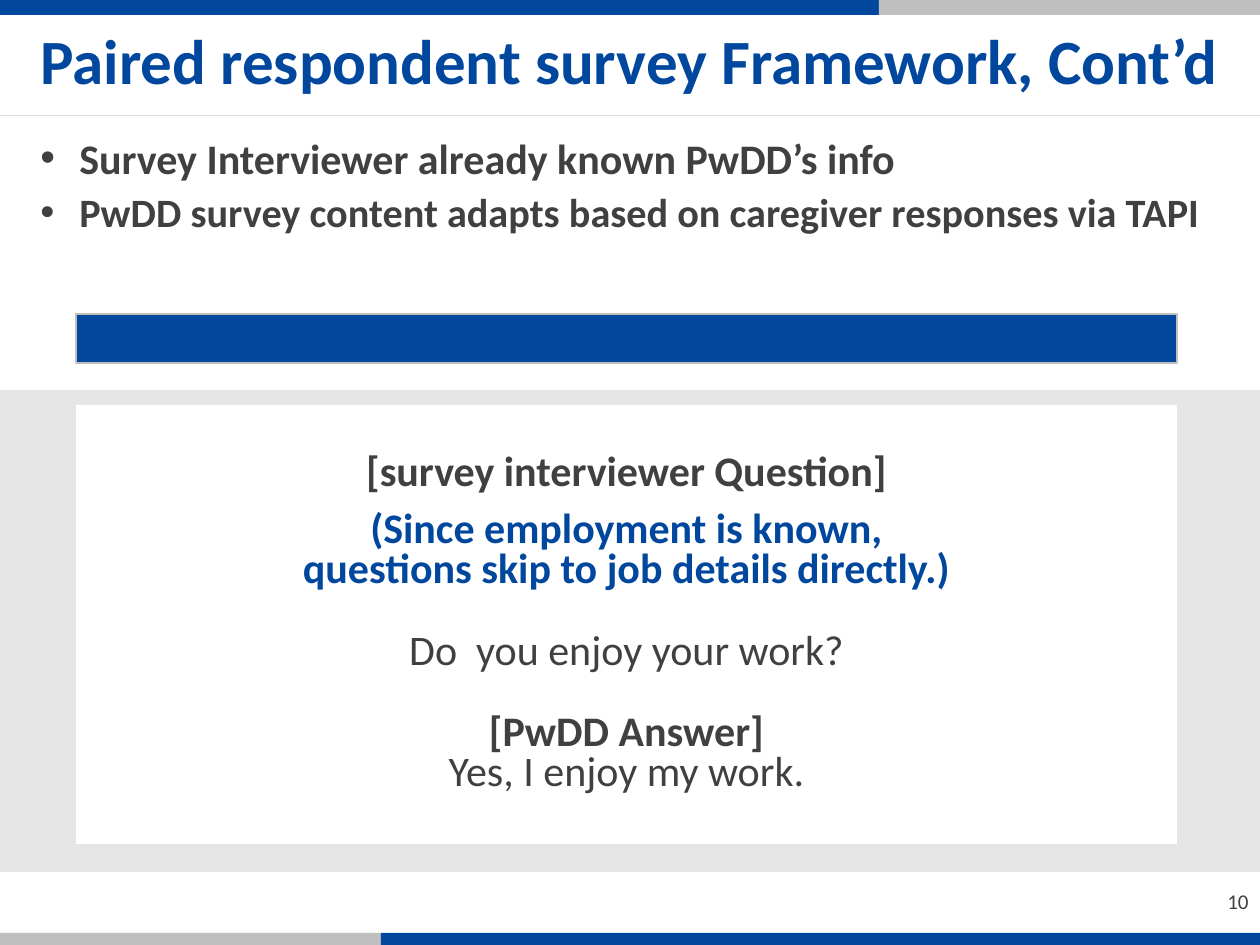
from lxml.etree import SubElement
from pptx import Presentation
from pptx.dml.color import RGBColor
from pptx.enum.shapes import MSO_CONNECTOR, MSO_SHAPE
from pptx.enum.text import MSO_ANCHOR as Anchor, PP_ALIGN as Align
from pptx.oxml.ns import qn
from pptx.util import Pt

PX = 914400 // 126
WIDTH, HEIGHT = 1260, 945
FONT = "Calibri"
BLUE, DARK, GRAY = "00479D", "404040", "BFBFBF"
BULLET_INDENT = 39

TITLE = "Paired respondent survey Framework, Cont’d"
BULLETS = [
    ("Survey Interviewer already known PwDD’s info", 24),
    ("PwDD survey content adapts based on caregiver responses via TAPI", 23),
]
# text, colour, bold, points of space before
DIALOGUE = [
    ("[survey interviewer Question]", DARK, True, 0),
    ("(Since employment is known,", BLUE, True, 9.8),
    ("questions skip to job details directly.)", BLUE, True, 0),
    ("Do  you enjoy your work?", DARK, False, 23.4),
    ("[PwDD Answer]", DARK, True, 23.4),
    ("Yes, I enjoy my work.", DARK, False, 0),
]
# left, top, width, height, colour
EDGE_BARS = [
    (0, 0, 879, 15, BLUE),
    (879, 0, 381, 15, GRAY),
    (0, 933, 381, 12, GRAY),
    (381, 933, 879, 12, BLUE),
]


def rgb(color):
    return RGBColor.from_string(color)


def scaled(*lengths):
    return [length * PX for length in lengths]


def add_box(slide, box, fill, kind=MSO_SHAPE.RECTANGLE):
    shape = slide.shapes.add_shape(kind, *scaled(*box))
    shape.shadow.inherit = False
    shape.fill.solid()
    shape.fill.fore_color.rgb = rgb(fill)
    shape.line.fill.background()
    return shape


def add_text_frame(slide, box, anchor=Anchor.TOP):
    frame = slide.shapes.add_textbox(*scaled(*box)).text_frame
    frame.word_wrap = True
    frame.vertical_anchor = anchor
    return frame


def write(frame, index, text, size, color=DARK, bold=False, align=Align.LEFT, spacing=1.0):
    """Fill the first paragraph at index 0, append one otherwise."""
    paragraph = frame.add_paragraph() if index else frame.paragraphs[0]
    paragraph.text = text
    paragraph.alignment = align
    paragraph.line_spacing = spacing
    font = paragraph.font
    font.name, font.size, font.bold = FONT, Pt(size), bold
    font.color.rgb = rgb(color)
    return paragraph


def add_bullet(paragraph):
    properties = paragraph._p.get_or_add_pPr()
    properties.set("marL", str(BULLET_INDENT * PX))
    properties.set("indent", str(-BULLET_INDENT * PX))
    bullet_font = properties.makeelement(qn("a:buFont"), {"typeface": "Arial"})
    bullet = properties.makeelement(qn("a:buChar"), {"char": "•"})
    defaults = properties.find(qn("a:defRPr"))
    defaults.addprevious(bullet_font)
    defaults.addprevious(bullet)


def add_rule(slide, top):
    rule = slide.shapes.add_connector(MSO_CONNECTOR.STRAIGHT, *scaled(0, top, WIDTH, top))
    rule.line.color.rgb = rgb("D9D9D9")
    rule.line.width = Pt(0.5)
    SubElement(rule._element.spPr, qn("a:effectLst"))


def add_band(slide, box, opacity):
    band = add_box(slide, box, "000000")
    color = band._element.spPr.find(qn("a:solidFill"))[0]
    SubElement(color, qn("a:alpha"), val=str(opacity * 1000))


def main():
    presentation = Presentation()
    presentation.slide_width, presentation.slide_height = scaled(WIDTH, HEIGHT)
    slide = presentation.slides.add_slide(presentation.slide_layouts[6])

    number = add_text_frame(slide, (978, 876, 283, 50), Anchor.MIDDLE)
    write(number, 0, "10", 12, align=Align.RIGHT)
    title = add_text_frame(slide, (28, 15, 1210, 89))
    write(title, 0, TITLE, 36, BLUE, True)

    for *box, color in EDGE_BARS:
        add_box(slide, box, color)
    add_rule(slide, 115)

    bullets = add_text_frame(slide, (28, 121, 1210, 120))
    for index, (text, size) in enumerate(BULLETS):
        add_bullet(write(bullets, index, text, size, bold=True, spacing=1.1))

    banner = add_box(slide, (76, 314, 1101, 49), BLUE)
    banner.line.color.rgb = rgb(GRAY)
    banner.line.width = Pt(1)

    add_band(slide, (0, 390, WIDTH, 482), 10)
    panel = add_box(slide, (76, 405, 1101, 439), "FFFFFF", MSO_SHAPE.ROUNDED_RECTANGLE)
    panel.adjustments[0] = 0
    panel.text_frame.vertical_anchor = Anchor.MIDDLE
    for index, (text, color, bold, gap) in enumerate(DIALOGUE):
        paragraph = write(panel.text_frame, index, text, 24, color, bold, Align.CENTER, 0.8)
        paragraph.space_before = Pt(gap)

    presentation.save("out.pptx")


if __name__ == "__main__":
    main()
